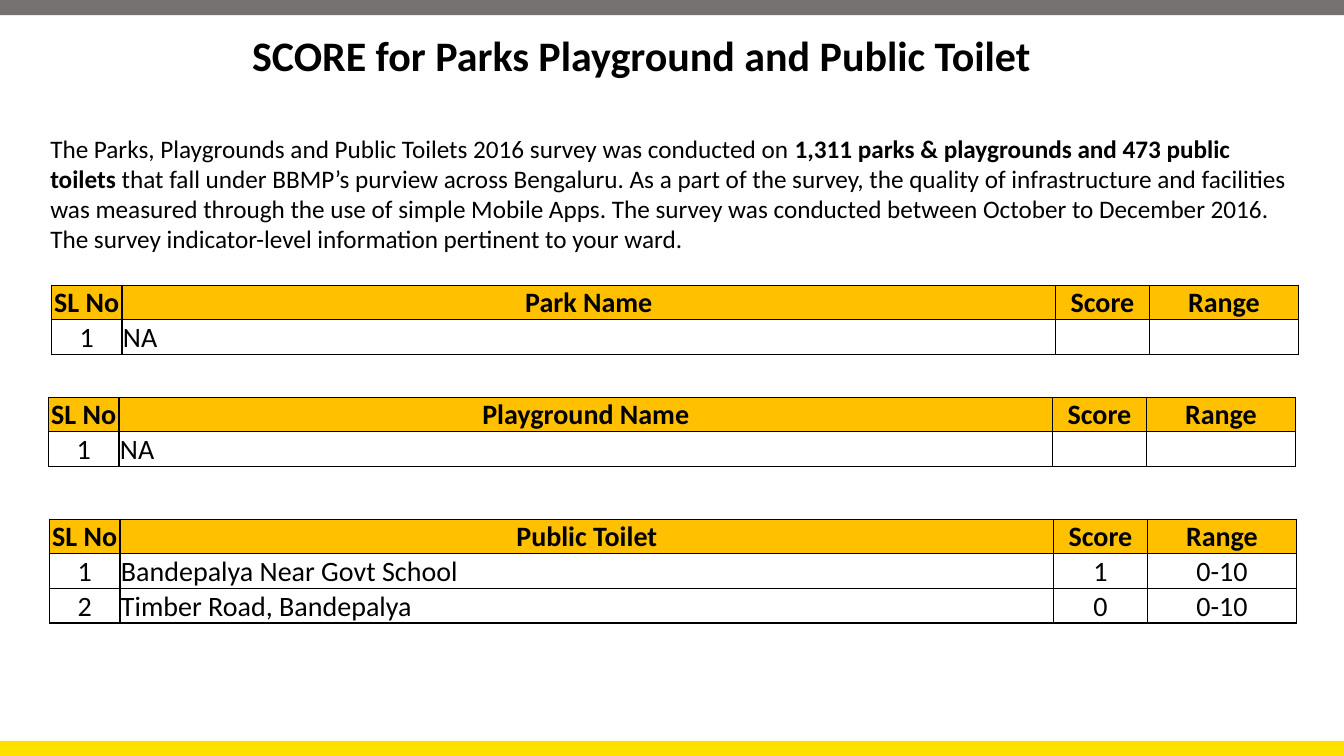
from lxml import etree
from pptx import Presentation
from pptx.dml.color import RGBColor
from pptx.enum.shapes import MSO_SHAPE
from pptx.enum.text import MSO_ANCHOR, MSO_AUTO_SIZE, PP_ALIGN
from pptx.oxml.ns import qn
from pptx.util import Inches, Pt

RECTANGLE = MSO_SHAPE.RECTANGLE
LEFT, CENTER = PP_ALIGN.LEFT, PP_ALIGN.CENTER
MIDDLE = MSO_ANCHOR.MIDDLE
FIT_SHAPE = MSO_AUTO_SIZE.SHAPE_TO_FIT_TEXT

BLACK = RGBColor(0x00, 0x00, 0x00)
GRAY = RGBColor(0x76, 0x71, 0x71)
YELLOW = RGBColor(0xFF, 0xE0, 0x00)
AMBER = RGBColor(0xFF, 0xC0, 0x00)

SLIDE_WIDTH, SLIDE_HEIGHT, BAR_HEIGHT = 13.33, 7.5, 0.15
COLUMN_WIDTHS = (0.7, 9.26, 0.93, 1.48)
ROW_HEIGHT = 0.34
CELL_MARGINS = {
    "margin_left": Inches(0.01),
    "margin_right": Inches(0.01),
    "margin_top": Inches(0.01),
    "margin_bottom": Inches(0),
    "vertical_anchor": MIDDLE,
}

TITLE = [[("SCORE for Parks Playground and Public Toilet", True)]]
SUMMARY = [
    [
        ("The Parks, Playgrounds and Public Toilets 2016 survey was conducted on", False),
        (" 1,311 parks & playgrounds and 473 public toilets", True),
        (" that fall under BBMP’s purview across Bengaluru. As a part of the survey, "
         "the quality of infrastructure and facilities was measured through the use of "
         "simple Mobile Apps. The survey was conducted between October to December 2016.", False),
    ],
    [("The survey indicator-level information pertinent to your ward.", False)],
]
SCORE_TABLES = [
    (0.51, 2.83, "Park Name", [("1", "NA", "", "")]),
    (0.48, 3.94, "Playground Name", [("1", "NA", "", "")]),
    (0.49, 5.15, "Public Toilet", [
        ("1", "Bandepalya Near Govt School", "1", "0-10"),
        ("2", "Timber Road, Bandepalya", "0", "0-10"),
    ]),
]


def add_span(para, text, size, bold):
    """Add a formatted run to a paragraph."""
    span = para.add_run()
    span.text = text
    span.font.color.rgb = BLACK
    for name, value in {"name": "Calibri", "size": Pt(size), "bold": bold}.items():
        setattr(span.font, name, value)


def add_bar(page, top, color):
    """Add a full-width coloured bar."""
    bar = page.shapes.add_shape(
        RECTANGLE, Inches(0), Inches(top), Inches(SLIDE_WIDTH), Inches(BAR_HEIGHT))
    bar.shadow.inherit = False
    bar.fill.solid()
    bar.fill.fore_color.rgb = color
    bar.line.fill.background()


def add_text(page, place, lines, size, alignment):
    """Add a text box whose lines share one paragraph."""
    box = page.shapes.add_textbox(*map(Inches, place))
    box.text_frame.word_wrap = True
    box.text_frame.auto_size = FIT_SHAPE
    para = box.text_frame.paragraphs[0]
    para.alignment = alignment
    for index, spans in enumerate(lines):
        if index:
            para.add_line_break()
        for text, bold in spans:
            add_span(para, text, size, bold)


def add_borders(cell):
    """Draw thin black lines on all sides of a cell."""
    properties = cell._tc.get_or_add_tcPr()
    for side in ("a:lnL", "a:lnR", "a:lnT", "a:lnB"):
        line = etree.SubElement(properties, qn(side), w=str(Pt(1)))
        fill = etree.SubElement(line, qn("a:solidFill"))
        etree.SubElement(fill, qn("a:srgbClr"), val=str(BLACK))


def fill_cell(cell, text, is_header, alignment):
    """Format one table cell and write its text."""
    for name, value in CELL_MARGINS.items():
        setattr(cell, name, value)
    add_borders(cell)
    if is_header:
        cell.fill.solid()
        cell.fill.fore_color.rgb = AMBER
    else:
        cell.fill.background()
    para = cell.text_frame.paragraphs[0]
    para.alignment = alignment
    if text:
        add_span(para, text, 20, is_header)


def add_score_table(page, left, top, heading, records):
    """Add a score table with a header row."""
    rows = [("SL No", heading, "Score", "Range"), *records]
    table = page.shapes.add_table(
        len(rows), len(COLUMN_WIDTHS), Inches(left), Inches(top),
        Inches(sum(COLUMN_WIDTHS)), Inches(ROW_HEIGHT * len(rows))).table
    table.first_row = table.horz_banding = False
    for column, width in zip(table.columns, COLUMN_WIDTHS):
        column.width = Inches(width)
    for row_index, row in enumerate(rows):
        is_header = row_index == 0
        for column_index, text in enumerate(row):
            alignment = LEFT if column_index == 1 and not is_header else CENTER
            fill_cell(table.cell(row_index, column_index), text, is_header, alignment)


def main():
    """Build the score slide and save it."""
    deck = Presentation()
    deck.slide_width = Inches(SLIDE_WIDTH)
    deck.slide_height = Inches(SLIDE_HEIGHT)
    page = deck.slides.add_slide(deck.slide_layouts[6])
    add_bar(page, SLIDE_HEIGHT - BAR_HEIGHT, YELLOW)
    add_bar(page, 0, GRAY)
    add_text(page, (1.73, 0.24, 9.27, 0.61), TITLE, 30, CENTER)
    add_text(page, (0.4, 1.27, 12.51, 1.31), SUMMARY, 18, LEFT)
    for score_table in SCORE_TABLES:
        add_score_table(page, *score_table)
    deck.save("out.pptx")


if __name__ == "__main__":
    main()
